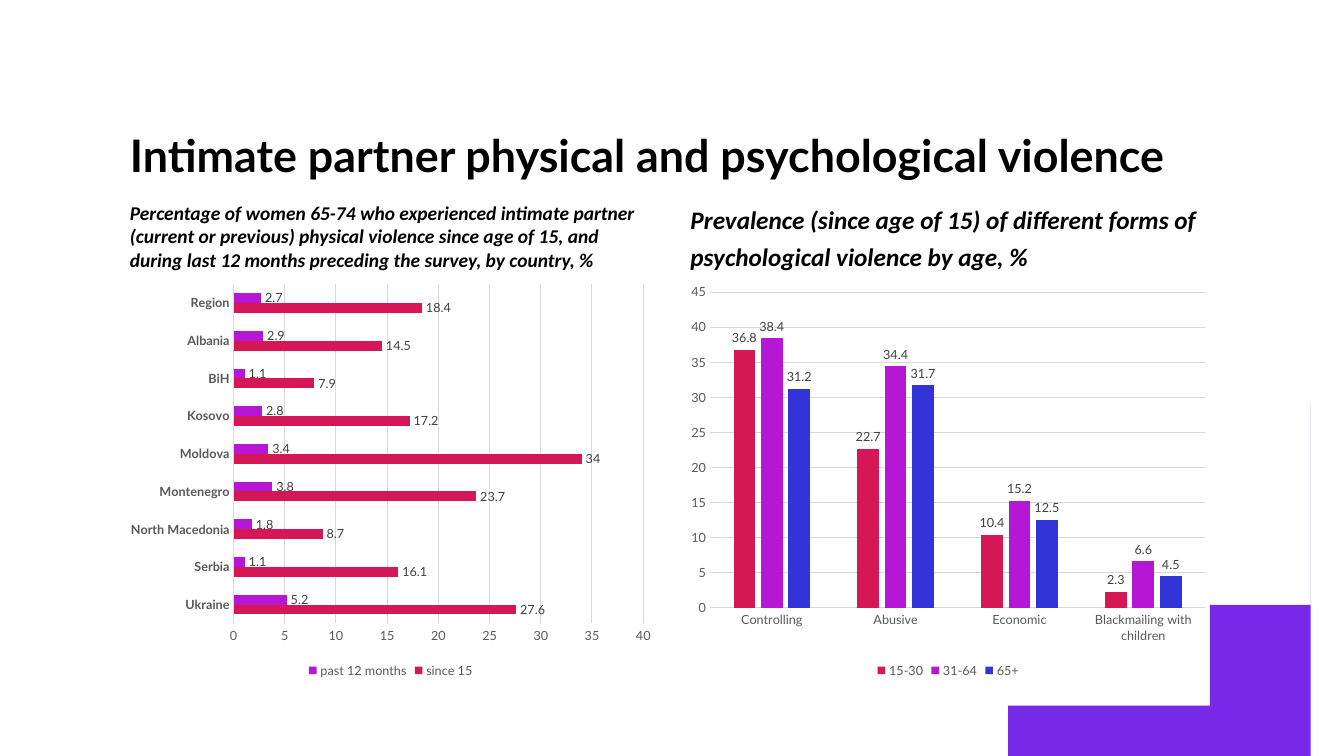
from pptx import Presentation
from pptx import util as u
from pptx.chart.data import CategoryChartData
from pptx.dml.color import RGBColor
from pptx.enum import chart as ch, text

COLORS = {
    "black": "000000", "label": "404040", "axis": "595959", "grid": "D9D9D9",
    "red": "D51756", "magenta": "B617D5", "blue": "3333DA", "violet": "7829E7",
}
TEXTS = [
    dict(box=(1.19, 0.4, 10.87, 1.45), font="Lato", size=32, italic=False, spacing=1.1, before=0,
         words="Intimate partner physical and psychological violence"),
    dict(box=(1.19, 1.84, 5.37, 0.9), font="Calibri", size=13.9, italic=True, spacing=1.0, before=10,
         words="Percentage of women 65-74 who experienced intimate partner (current or previous) "
               "physical violence since age of 15, and during last 12 months preceding the survey, "
               "by country, %"),
    dict(box=(6.75, 1.84, 5.31, 0.9), font="Calibri", size=18, italic=True, spacing=1.2, before=10,
         words="Prevalence (since age of 15) of different forms of psychological violence by age, %"),
]
CHARTS = [
    dict(kind=ch.XL_CHART_TYPE.BAR_CLUSTERED, box=(1.19, 2.74, 5.37, 4.03),
         gap=182, overlap=0, top=40, bold=True,
         categories=["Ukraine", "Serbia", "North Macedonia", "Montenegro", "Moldova",
                     "Kosovo", "BiH", "Albania", "Region"],
         series=[("since 15", "red", [27.6, 16.1, 8.7, 23.7, 34, 17.2, 7.9, 14.5, 18.4]),
                 ("past 12 months", "magenta", [5.2, 1.1, 1.8, 3.8, 3.4, 2.8, 1.1, 2.9, 2.7])]),
    dict(kind=ch.XL_CHART_TYPE.COLUMN_CLUSTERED, box=(6.75, 2.74, 5.31, 4.03),
         gap=219, overlap=-27, top=45, bold=False,
         categories=["Controlling", "Abusive", "Economic", "Blackmailing with children"],
         series=[("15-30", "red", [36.8, 22.7, 10.4, 2.3]),
                 ("31-64", "magenta", [38.4, 34.4, 15.2, 6.6]),
                 ("65+", "blue", [31.2, 31.7, 12.5, 4.5])]),
]
CORNER = [(13.33, 3.78), (13.33, 7.5), (9.63, 7.5)]
CURVE = [(9.71, 7.5), (11.67, 7.41), (13.23, 5.87), (13.33, 3.96)]
CURVE_STEPS = 60


def color(name):
    return RGBColor.from_string(COLORS[name])


def inches(box):
    return [u.Inches(value) for value in box]


def style_font(font, name, size, shade, bold=False, italic=False):
    font.name, font.size = name, u.Pt(size)
    font.bold, font.italic = bold, italic
    font.color.rgb = color(shade)


def style_line(line, shade):
    line.color.rgb = color(shade)
    line.width = u.Pt(0.75)


def curve_point(t):
    weights = ((1 - t) ** 3, 3 * t * (1 - t) ** 2, 3 * t * t * (1 - t), t ** 3)
    return tuple(sum(w * point[axis] for w, point in zip(weights, CURVE)) for axis in (0, 1))


def add_corner(slide):
    start, *others = CORNER
    points = others + [curve_point(step / CURVE_STEPS) for step in range(CURVE_STEPS + 1)]
    builder = slide.shapes.build_freeform(*start, scale=u.Inches(1))
    builder.add_line_segments(points, close=True)
    shape = builder.convert_to_shape()
    shape.shadow.inherit = False
    shape.fill.solid()
    shape.fill.fore_color.rgb = color("violet")
    shape.line.fill.background()


def add_text(slide, item):
    frame = slide.shapes.add_textbox(*inches(item["box"])).text_frame
    frame.word_wrap = True
    frame.vertical_anchor = text.MSO_ANCHOR.BOTTOM
    frame.text = item["words"]
    paragraph = frame.paragraphs[0]
    paragraph.line_spacing = item["spacing"]
    paragraph.space_before = u.Pt(item["before"])
    style_font(paragraph.runs[0].font, item["font"], item["size"], "black", True, item["italic"])


def style_axes(chart, item):
    for axis, bold in ((chart.category_axis, item["bold"]), (chart.value_axis, False)):
        axis.major_tick_mark = axis.minor_tick_mark = ch.XL_TICK_MARK.NONE
        style_font(axis.tick_labels.font, "Lato", 9, "axis", bold)
    style_line(chart.category_axis.format.line, "grid")
    values = chart.value_axis
    values.format.line.fill.background()
    values.minimum_scale, values.maximum_scale, values.major_unit = 0, item["top"], 5
    values.has_major_gridlines = True
    style_line(values.major_gridlines.format.line, "grid")


def add_chart(slide, item):
    data = CategoryChartData()
    data.categories = item["categories"]
    for name, shade, values in item["series"]:
        data.add_series(name, values)
    chart = slide.shapes.add_chart(item["kind"], *inches(item["box"]), data).chart
    chart.has_title = False
    style_font(chart.font, "Lato", 10, "black")
    style_axes(chart, item)
    chart.has_legend = True
    chart.legend.position = ch.XL_LEGEND_POSITION.BOTTOM
    chart.legend.include_in_layout = False
    style_font(chart.legend.font, "Lato", 9, "axis")
    plot = chart.plots[0]
    plot.vary_by_categories = False
    plot.gap_width, plot.overlap = item["gap"], item["overlap"]
    for series, (name, shade, values) in zip(plot.series, item["series"]):
        series.format.fill.solid()
        series.format.fill.fore_color.rgb = color(shade)
        series.invert_if_negative = False
        labels = series.data_labels
        labels.show_value = True
        labels.position = ch.XL_LABEL_POSITION.OUTSIDE_END
        style_font(labels.font, "Lato", 9, "label")


def main():
    presentation = Presentation()
    presentation.slide_width, presentation.slide_height = inches((13.33, 7.5))
    slide = presentation.slides.add_slide(presentation.slide_layouts[6])
    add_corner(slide)
    for item in TEXTS:
        add_text(slide, item)
    for item in CHARTS:
        add_chart(slide, item)
    presentation.save("out.pptx")


if __name__ == "__main__":
    main()
